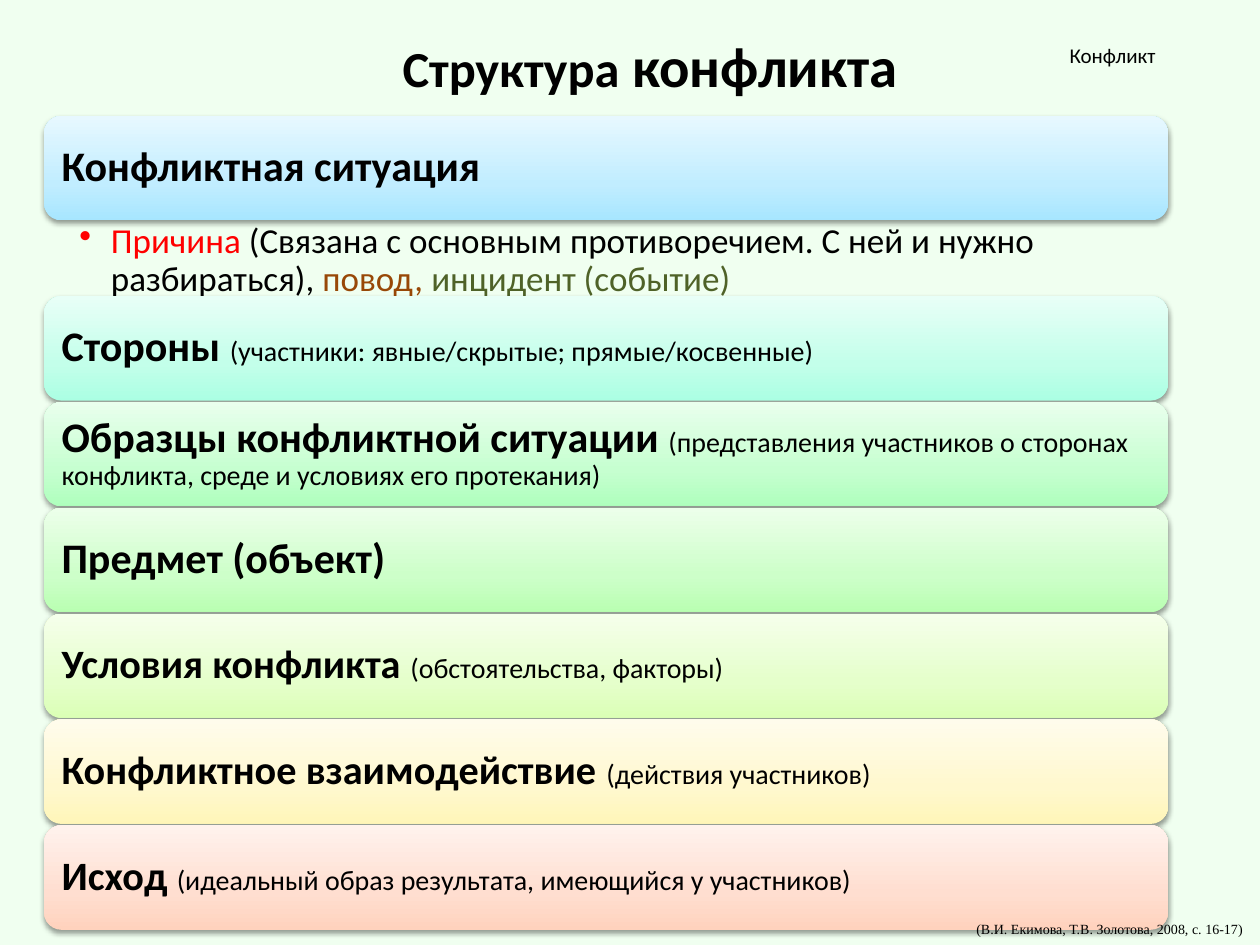
from copy import deepcopy

from lxml import etree
from pptx import Presentation
from pptx.dml.color import RGBColor
from pptx.enum.shapes import MSO_SHAPE
from pptx.enum.text import MSO_ANCHOR, PP_ALIGN
from pptx.oxml import parse_xml
from pptx.oxml.ns import nsdecls, qn
from pptx.util import Inches, Pt

COLORS = {
    "background": "F0FFF0",
    "text": "000000",
    "cause": "FF0000",
    "pretext": "984807",
    "incident": "4F6228",
}
SHADOW = (
    f'<a:outerShdw {nsdecls("a")} blurRad="40000" dist="20000" dir="5400000" rotWithShape="0">'
    '<a:srgbClr val="000000"><a:alpha val="38000"/></a:srgbClr></a:outerShdw>'
)


def write_text(shape, runs, font="Calibri", align=PP_ALIGN.LEFT, anchor=MSO_ANCHOR.TOP,
               insets=(0.1, 0.05, 0.1, 0.05), spacing=1.0, wrap=True):
    """Fill a shape with one paragraph of (text, size, bold, colour name) runs."""
    frame = shape.text_frame
    frame.word_wrap = wrap
    frame.vertical_anchor = anchor
    (frame.margin_left, frame.margin_top,
     frame.margin_right, frame.margin_bottom) = [Inches(inset) for inset in insets]
    paragraph = frame.paragraphs[0]
    paragraph.alignment = align
    paragraph.line_spacing = spacing
    for text, size, bold, color in runs:
        run = paragraph.add_run()
        run.text = text
        run.font.name = font
        run.font.size = Pt(size)
        run.font.bold = bold
        run.font.color.rgb = RGBColor.from_string(COLORS[color])
    return paragraph


presentation = Presentation()
presentation.slide_width = Inches(10)
presentation.slide_height = Inches(7.5)
slide = presentation.slides.add_slide(presentation.slide_layouts[6])
slide.background.fill.solid()
slide.background.fill.fore_color.rgb = RGBColor.from_string(COLORS["background"])

# Title
title = slide.shapes.add_textbox(Inches(0.91), Inches(0.24), Inches(8.5), Inches(0.55))
write_text(title, [("Структура", 28.8, True, "text"), (" конфликта", 32.4, True, "text")],
           align=PP_ALIGN.CENTER, anchor=MSO_ANCHOR.MIDDLE)

# Details below the first bar
details = slide.shapes.add_textbox(Inches(0.35), Inches(1.74), Inches(8.92), Inches(0.6))
bullet = write_text(details, [
    ("Причина", 20, False, "cause"),
    (" (Связана с основным противоречием. С ней и нужно разбираться), ", 20, False, "text"),
    ("повод, ", 20, False, "pretext"),
    ("инцидент (событие)", 20, False, "incident"),
], insets=(0.28, 0.03, 0.16, 0.03), spacing=0.9)
properties = bullet._p.get_or_add_pPr()
properties.set("marL", str(Inches(0.25)))
properties.set("indent", str(-Inches(0.25)))
etree.SubElement(properties, qn("a:buChar")).set("char", "•")

# Bars: heading, heading size, note, gradient from bottom to top
bars = [
    ("Конфликтная ситуация", 24, "", ("A7E6FF", "C1EDFF", "E7F8FF")),
    ("Стороны ", 24, "(участники: явные/скрытые; прямые/косвенные)",
     ("ABFFE3", "C3FFEA", "E8FFF7")),
    ("Образцы конфликтной ситуации ", 24,
     "(представления участников о сторонах конфликта, среде и условиях его протекания)",
     ("AFFFBD", "C6FFD0", "E9FFED")),
    ("Предмет (объект)", 24, "", ("B9FFB2", "CDFFC9", "ECFFEA")),
    ("Условия конфликта ", 23, "(обстоятельства, факторы)", ("DBFFB6", "E5FFCB", "F5FFEB")),
    ("Конфликтное взаимодействие ", 23, "(действия участников)",
     ("FFF6B9", "FFF8CE", "FFFCEC")),
    ("Исход ", 23, "(идеальный образ результата, имеющийся у участников)",
     ("FFD2BD", "FFDED0", "FFF2ED")),
]
for index, (heading, size, note, gradient) in enumerate(bars):
    top = 0.92 if index == 0 else 2.35 + 0.84 * (index - 1)
    bar = slide.shapes.add_shape(MSO_SHAPE.ROUNDED_RECTANGLE, Inches(0.35), Inches(top),
                                 Inches(8.92), Inches(0.83))
    bar.line.fill.background()
    bar.fill.gradient()
    bar.fill.gradient_angle = 90
    stop_list = bar._element.spPr.find(qn("a:gradFill")).find(qn("a:gsLst"))
    stop_list.insert(1, deepcopy(stop_list[0]))
    for stop, position, color in zip(bar.fill.gradient_stops, (0, 0.35, 1), gradient):
        stop.position = position
        stop.color.rgb = RGBColor.from_string(color)
    bar.shadow.inherit = False
    bar._element.spPr.find(qn("a:effectLst")).append(parse_xml(SHADOW))

    runs = [(heading, size, True, "text")]
    if note:
        runs.append((note, 16, False, "text"))
    write_text(bar, runs, anchor=MSO_ANCHOR.MIDDLE, insets=(0.1,) * 4, spacing=0.9)

# Topic label and source
topic = slide.shapes.add_textbox(Inches(8.39), Inches(0.29), Inches(0.89), Inches(0.3))
write_text(topic, [("Конфликт", 12, False, "text")], wrap=False)
source = slide.shapes.add_textbox(Inches(7.65), Inches(7.26), Inches(2.35), Inches(0.24))
write_text(source, [("(В.И. Екимова, Т.В. Золотова, 2008, с. 16-17)", 8, False, "text")],
           font="Times New Roman", wrap=False)

presentation.save("out.pptx")
